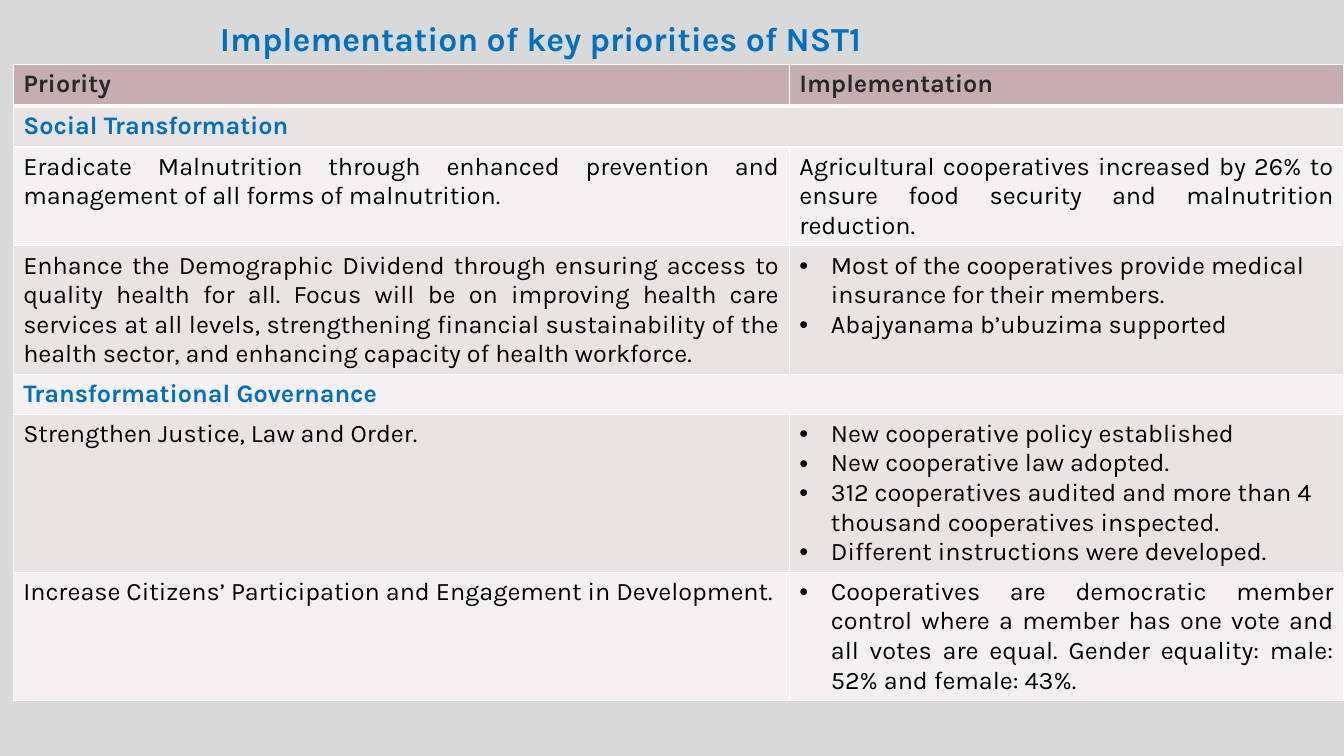
"""Builds the slide on how cooperatives implement the NST1 priorities."""
from pptx import Presentation
from pptx.dml.color import RGBColor
from pptx.enum.text import MSO_AUTO_SIZE, PP_ALIGN
from pptx.oxml.ns import qn
from pptx.util import Pt
from lxml import etree

JUSTIFY, LEFT = PP_ALIGN.JUSTIFY, PP_ALIGN.LEFT
FONT = "Karla"
BLUE, BLACK, DARK, WHITE = "0070C0", "000000", "29282D", "FFFFFF"
BACKGROUND, HEADER, BANDS = "D9D9D9", "C6ADB0", ("F5F1F2", "EAE3E4")
INDENT = 22.5

TITLE = "Implementation of key priorities of NST1"
COLUMNS = (554.4, 396)
HEADINGS = ("Priority", "Implementation")
# Each row: height, priority, implementation lines, bulleted, alignment
ROWS = [
    (29.5, "Social Transformation", [], False, LEFT),
    (70.5, "Eradicate Malnutrition through enhanced prevention and management of all "
     "forms of malnutrition.",
     ["Agricultural cooperatives increased by 26% to ensure food security and "
      "malnutrition reduction."], False, JUSTIFY),
    (91.5, "Enhance the Demographic Dividend through ensuring access to quality health "
     "for all. Focus will be on improving health care services at all levels, "
     "strengthening financial sustainability of the health sector, and enhancing "
     "capacity of health workforce.",
     ["Most of the cooperatives provide medical insurance for their members.",
      "Abajyanama b’ubuzima supported"], True, LEFT),
    (28.5, "Transformational Governance", [], False, LEFT),
    (112.5, "Strengthen Justice, Law and Order.",
     ["New cooperative policy established",
      "New cooperative law adopted.",
      "312 cooperatives audited and more than 4 thousand cooperatives inspected.",
      "Different instructions were developed."], True, LEFT),
    (91.5, "Increase Citizens’ Participation and Engagement in Development.",
     ["Cooperatives are democratic member control where a member has one vote and all "
      "votes are equal. Gender equality: male: 52% and female: 43%."], True, JUSTIFY),
]


def rgb(value):
    return RGBColor.from_string(value)


def write(tf, lines, size, color, bold=False, align=LEFT, bullets=False):
    tf.text = "\n".join(lines)
    for p in tf.paragraphs:
        p.alignment = align
        for r in p.runs:
            r.font.name, r.font.size, r.font.bold = FONT, Pt(size), bold
            r.font.color.rgb = rgb(color)
        if bullets:
            pPr = p._p.get_or_add_pPr()
            pPr.set("marL", str(Pt(INDENT)))
            pPr.set("indent", str(-Pt(INDENT)))
            etree.SubElement(pPr, qn("a:buFont")).set("typeface", "Arial")
            etree.SubElement(pPr, qn("a:buChar")).set("char", "•")


def paint(cell, fill, top=1, bottom=1):
    cell.fill.solid()
    cell.fill.fore_color.rgb = rgb(fill)
    tcPr = cell._tc.get_or_add_tcPr()
    edges = (("a:lnL", 1), ("a:lnR", 1), ("a:lnT", top), ("a:lnB", bottom))
    for i, (tag, width) in enumerate(edges):
        ln = etree.Element(qn(tag), w=str(Pt(width)))
        solid = etree.SubElement(ln, qn("a:solidFill"))
        etree.SubElement(solid, qn("a:srgbClr")).set("val", WHITE)
        tcPr.insert(i, ln)


def main():
    prs = Presentation()
    prs.slide_width, prs.slide_height = Pt(960), Pt(540)
    s = prs.slides.add_slide(prs.slide_layouts[6])
    s.background.fill.solid()
    s.background.fill.fore_color.rgb = rgb(BACKGROUND)

    heights = [29.5] + [row[0] for row in ROWS]
    table = s.shapes.add_table(len(heights), len(COLUMNS), Pt(9.4), Pt(46.1),
                               Pt(sum(COLUMNS)), Pt(sum(heights))).table
    for column, width in zip(table.columns, COLUMNS):
        column.width = Pt(width)
    for row, height in zip(table.rows, heights):
        row.height = Pt(height)

    for c, heading in enumerate(HEADINGS):
        write(table.cell(0, c).text_frame, [heading], 18, DARK, True)
        paint(table.cell(0, c), HEADER, bottom=3)
    for n, (_, priority, lines, bullets, align) in enumerate(ROWS, 1):
        left, right = table.cell(n, 0), table.cell(n, 1)
        for cell in (left, right):
            paint(cell, BANDS[n % 2], top=3 if n == 1 else 1)
        if lines:
            write(left.text_frame, [priority], 18, BLACK, align=JUSTIFY)
            write(right.text_frame, lines, 18, BLACK, False, align, bullets)
        else:
            left.merge(right)
            write(left.text_frame, [priority], 18, BLUE, True)

    tf = s.shapes.add_textbox(Pt(150), Pt(9.4), Pt(482.4), Pt(36)).text_frame
    tf.word_wrap = False
    tf.auto_size = MSO_AUTO_SIZE.SHAPE_TO_FIT_TEXT
    write(tf, [TITLE], 24, BLUE, True)
    prs.save("out.pptx")


if __name__ == "__main__":
    main()
